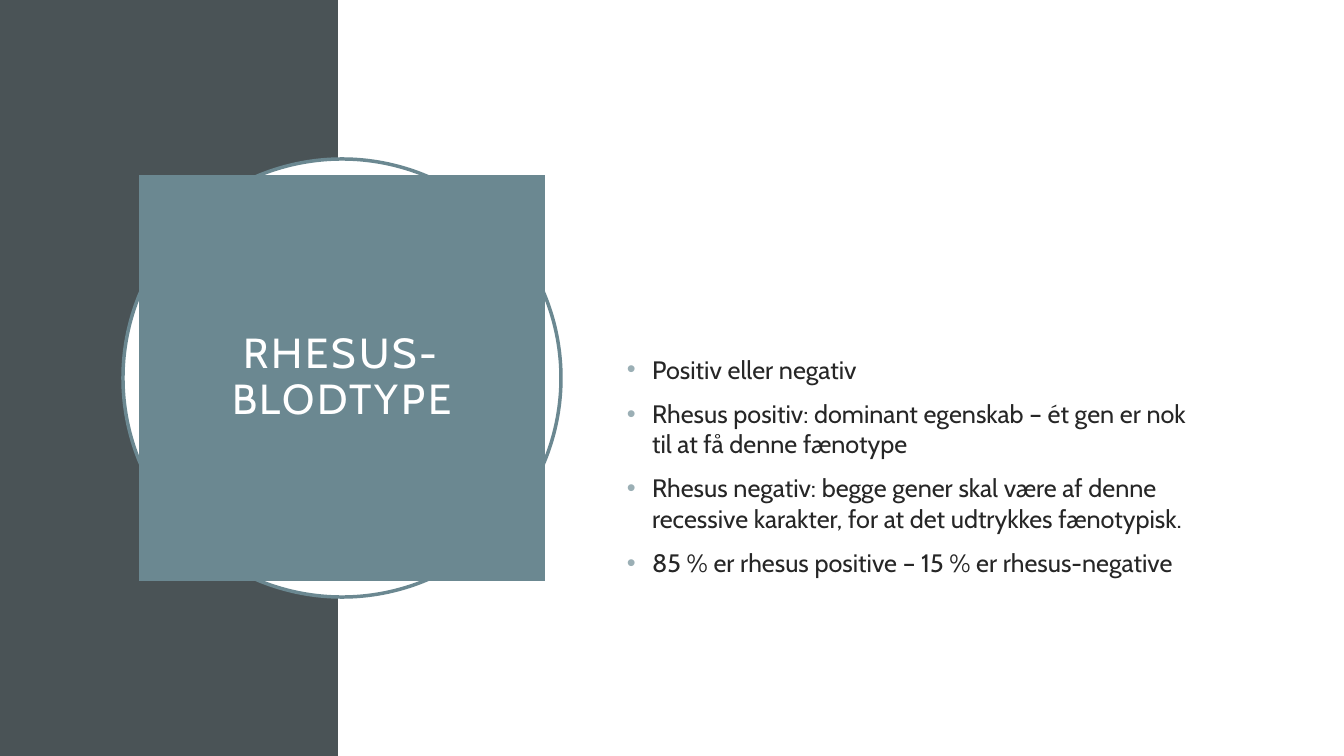
import pptx
import pptx.util
import pptx.dml.color
import pptx.enum.shapes
import pptx.enum.text
import pptx.oxml.ns
import lxml.etree

SHAPE = pptx.enum.shapes.MSO_SHAPE
ALIGN = pptx.enum.text.PP_ALIGN
ANCHOR = pptx.enum.text.MSO_ANCHOR
SLATE, TEAL, WHITE, INK, BULLET = "4A5356", "6B8891", "FFFFFF", "262626", "9BAFB5"


def px(n):
    return pptx.util.Emu(round(n * 914400 / 100.8))


def rgb(color):
    return pptx.dml.color.RGBColor.from_string(color)


def apply(target, values):
    for name, value in values.items():
        setattr(target, name, value)


class Deck:
    font = "Cabin"

    def __init__(self, prs):
        self.slide = prs.slides.add_slide(prs.slide_layouts[6])

    def shape(self, kind, box, fill, line=None):
        sp = self.slide.shapes.add_shape(kind, *map(px, box))
        sp.shadow.inherit = False
        sp.fill.solid()
        sp.fill.fore_color.rgb = rgb(fill)
        if line:
            sp.line.color.rgb = rgb(line)
            sp.line.width = pptx.util.Pt(2.5)
        else:
            sp.line.fill.background()
        return sp

    def style(self, r, size, color):
        apply(r.font, {"name": self.font, "size": pptx.util.Pt(size)})
        r.font.color.rgb = rgb(color)

    def title(self, sp, text):
        tf = sp.text_frame
        apply(tf, {"word_wrap": True, "vertical_anchor": ANCHOR.MIDDLE,
                   "margin_left": px(20), "margin_right": px(20),
                   "margin_top": px(20), "margin_bottom": px(20)})
        p = tf.paragraphs[0]
        apply(p, {"alignment": ALIGN.CENTER, "line_spacing": 0.9})
        r = p.add_run()
        r.text = text
        self.style(r, 30, WHITE)
        r.font._element.set("spc", "200")

    def bullets(self, box, items):
        tf = self.slide.shapes.add_textbox(*map(px, box)).text_frame
        apply(tf, {"word_wrap": True, "vertical_anchor": ANCHOR.TOP})
        for i, item in enumerate(items):
            p = tf.add_paragraph() if i else tf.paragraphs[0]
            if i:
                p.space_before = pptx.util.Pt(10)
            self.bullet(p)
            r = p.add_run()
            r.text = item
            self.style(r, 18, INK)

    def bullet(self, p):
        indent = pptx.util.Inches(0.25)
        pPr = p._p.get_or_add_pPr()
        pPr.set("marL", str(indent))
        pPr.set("indent", str(-indent))
        qn = pptx.oxml.ns.qn
        clr = lxml.etree.SubElement(pPr, qn("a:buClr"))
        lxml.etree.SubElement(clr, qn("a:srgbClr"), val=BULLET)
        lxml.etree.SubElement(pPr, qn("a:buFont"), typeface="Arial")
        lxml.etree.SubElement(pPr, qn("a:buChar"), char="•")


def main():
    prs = pptx.Presentation()
    apply(prs, {"slide_width": px(1344), "slide_height": px(756)})
    deck = Deck(prs)

    # Dark side panel
    deck.shape(SHAPE.RECTANGLE, (0, 0, 338, 756), SLATE)

    # Title block on its ring
    deck.shape(SHAPE.OVAL, (123, 159, 438, 438), WHITE, TEAL)
    block = deck.shape(SHAPE.RECTANGLE, (139, 175, 406, 406), TEAL)
    deck.title(block, "RHESUS-BLODTYPE")

    # Facts
    deck.bullets((617, 349, 587, 236), [
        "Positiv eller negativ",
        "Rhesus positiv: dominant egenskab – ét gen er nok til at få denne fænotype",
        "Rhesus negativ: begge gener skal være af denne recessive karakter, "
        "for at det udtrykkes fænotypisk.",
        "85 % er rhesus positive – 15 % er rhesus-negative",
    ])

    prs.save("out.pptx")


if __name__ == "__main__":
    main()
